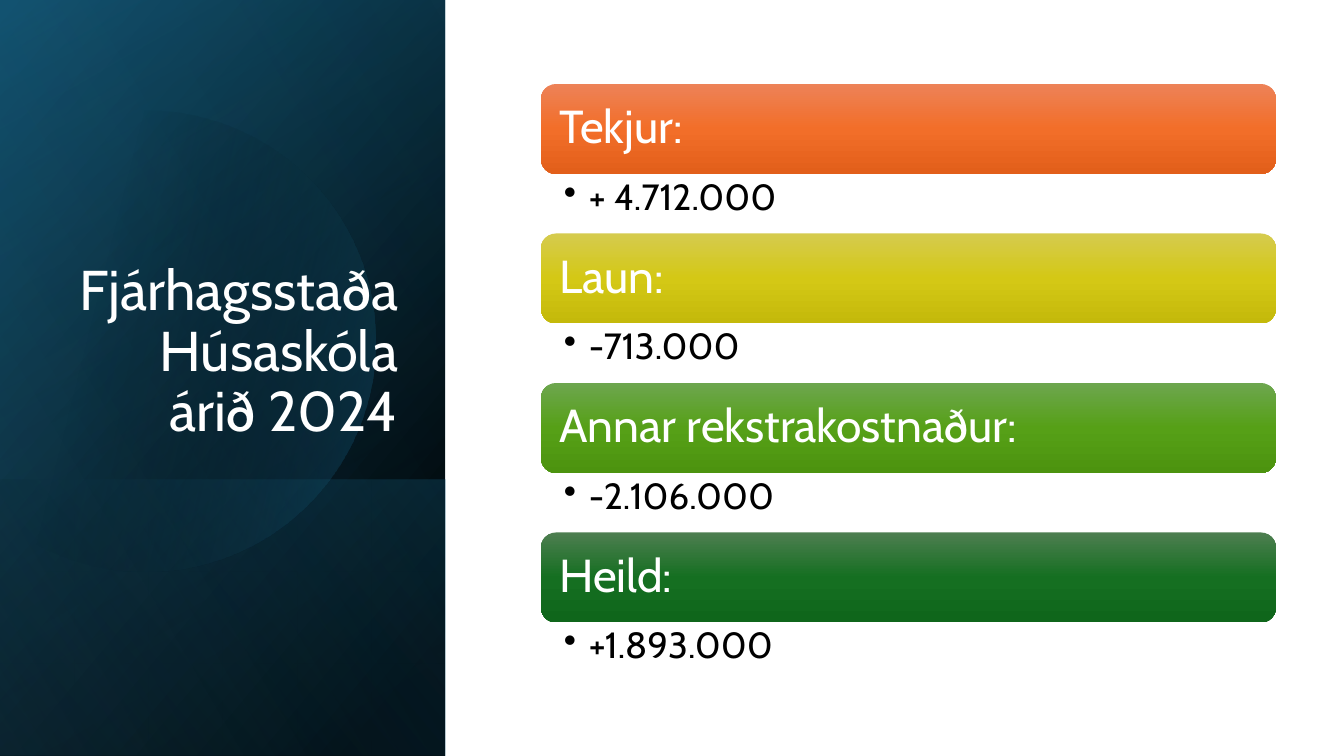
from collections import namedtuple
from math import acos, cos, pi, sin

from lxml import etree
from pptx import Presentation
from pptx.dml.color import RGBColor
from pptx.enum.shapes import MSO_SHAPE as Shape
from pptx.enum.text import MSO_ANCHOR as Anchor, PP_ALIGN as Align
from pptx.oxml.ns import qn
from pptx.util import Pt

EMU_PER_PX = 914400 / 100.8
Box = namedtuple("Box", "left top width height")


class Theme:
    font = "Cabin"
    title_size, label_size, value_size = 40, 33, 26
    light, dark = "FFFFFF", "000000"
    # Gradient stops: position %, colour, opacity %
    base = [(8, "000000", 100), (100, "104862", 100)]
    shade = [(0, "000000", 0), (99, "156082", 46)]
    foot = [(2, "156082", 29), (100, "000000", 30)]
    disc = [(29, "000000", 0), (100, "156082", 43)]
    gloss = [(0, "000000", 0), (99, "46B1E1", 11)]
    orange = ("ED8257", "F26E29", "E25F1A")
    yellow = ("D5CB4E", "D4C815", "C4B90B")
    lime = ("6DA64E", "56A017", "4C930F")
    green = ("4D7E50", "156F21", "0F661B")


ENTRIES = [
    ("Tekjur:", "+ 4.712.000", Theme.orange),
    ("Laun:", "-713.000", Theme.yellow),
    ("Annar rekstrakostnaður:", "-2.106.000", Theme.lime),
    ("Heild:", "+1.893.000", Theme.green),
]


def px(length):
    return round(length * EMU_PER_PX)


def emu(box):
    return [px(length) for length in box]


def paint(shape, stops, angle):
    """Give a shape a linear gradient and no line or shadow."""
    shape.shadow.inherit = False
    shape.line.fill.background()
    shape.fill.gradient()
    gradient = shape.fill._xPr.find(qn("a:gradFill"))
    stop_list = gradient.find(qn("a:gsLst"))
    for stop in list(stop_list):
        stop_list.remove(stop)
    for position, color, opacity in stops:
        stop = etree.SubElement(stop_list, qn("a:gs"), pos=str(position * 1000))
        tint = etree.SubElement(stop, qn("a:srgbClr"), val=color)
        if opacity < 100:
            etree.SubElement(tint, qn("a:alpha"), val=str(opacity * 1000))
    gradient.find(qn("a:lin")).set("ang", str(angle * 60000))


def write(shape, text, size, color, insets, anchor, align=Align.LEFT):
    frame = shape.text_frame
    frame.word_wrap = True
    frame.vertical_anchor = anchor
    (frame.margin_left, frame.margin_top,
     frame.margin_right, frame.margin_bottom) = emu(insets)
    para = frame.paragraphs[0]
    para.text = text
    para.alignment = align
    para.line_spacing = 0.9
    para.font.name = Theme.font
    para.font.size = Pt(size)
    para.font.color.rgb = RGBColor.from_string(color)
    return para


def add_bullet(para, indent):
    properties = para._p.get_or_add_pPr()
    properties.set("marL", str(px(indent)))
    properties.set("indent", str(-px(indent)))
    mark = etree.Element(qn("a:buChar"), char="•")
    default_run = properties.find(qn("a:defRPr"))
    if default_run is None:
        properties.append(mark)
    else:
        default_run.addprevious(mark)


def add_layer(page, box, stops, angle):
    """A mirrored rectangle, turned a quarter so that it covers the box."""
    shift = (box.width - box.height) / 2
    turned = Box(box.left + shift, box.top - shift, box.height, box.width)
    layer = page.shapes.add_shape(Shape.RECTANGLE, *emu(turned))
    layer.rotation = 90
    layer._element.spPr.find(qn("a:xfrm")).set("flipH", "1")
    paint(layer, stops, angle)


def add_disc(page, box):
    """A circle cut off by the left edge of the box."""
    center_x, center_y, radius, steps = 145, 341, 230, 90
    reach = acos(-center_x / radius)
    angles = [reach * (2 * step / steps - 1) for step in range(steps + 1)]
    points = [(px(box.left + center_x + radius * cos(angle)),
               px(box.top + center_y + radius * sin(angle))) for angle in angles]
    builder = page.shapes.build_freeform(*points[0])
    builder.add_line_segments(points[1:], close=True)
    paint(builder.convert_to_shape(), Theme.disc, 14)


def draw_title_panel(page, box):
    # Layered backdrop
    add_layer(page, box, Theme.base, 50)
    add_layer(page, box, Theme.shade, 30)
    foot = Box(box.left, box.top + 480, box.width, box.height - 480)
    add_layer(page, foot, Theme.foot, 130)
    add_disc(page, box)
    add_layer(page, box, Theme.gloss, 120)
    # Title
    title = page.shapes.add_textbox(*emu((box.left + 64, box.top + 185, 344, 264)))
    write(title, "Fjárhagsstaða Húsaskóla árið 2024", Theme.title_size,
          Theme.light, (10, 5, 10, 5), Anchor.BOTTOM, Align.RIGHT)


def draw_entries(page, box):
    bar_height = 90
    pitch = box.height / len(ENTRIES)
    for row, (label, value, colors) in enumerate(ENTRIES):
        top = box.top + row * pitch
        # Coloured bar with its label
        bar = page.shapes.add_shape(
            Shape.ROUNDED_RECTANGLE, *emu((box.left, top, box.width, bar_height)))
        paint(bar, [(at, color, 100) for at, color in zip((0, 50, 100), colors)], 90)
        write(bar, label, Theme.label_size, Theme.light, (14, 14, 14, 14), Anchor.MIDDLE)
        # Amount below the bar
        amount = page.shapes.add_textbox(
            *emu((box.left, top + bar_height, box.width, pitch - bar_height)))
        para = write(amount, value, Theme.value_size, Theme.dark,
                     (23, 5, 26, 5), Anchor.TOP)
        add_bullet(para, 25)


def main():
    deck = Presentation()
    deck.slide_width, deck.slide_height = px(1344), px(756)
    page = deck.slides.add_slide(deck.slide_layouts[6])
    draw_title_panel(page, Box(0, 0, 445, 756))
    draw_entries(page, Box(541, 84, 735, 598))
    deck.save("out.pptx")


if __name__ == "__main__":
    main()
